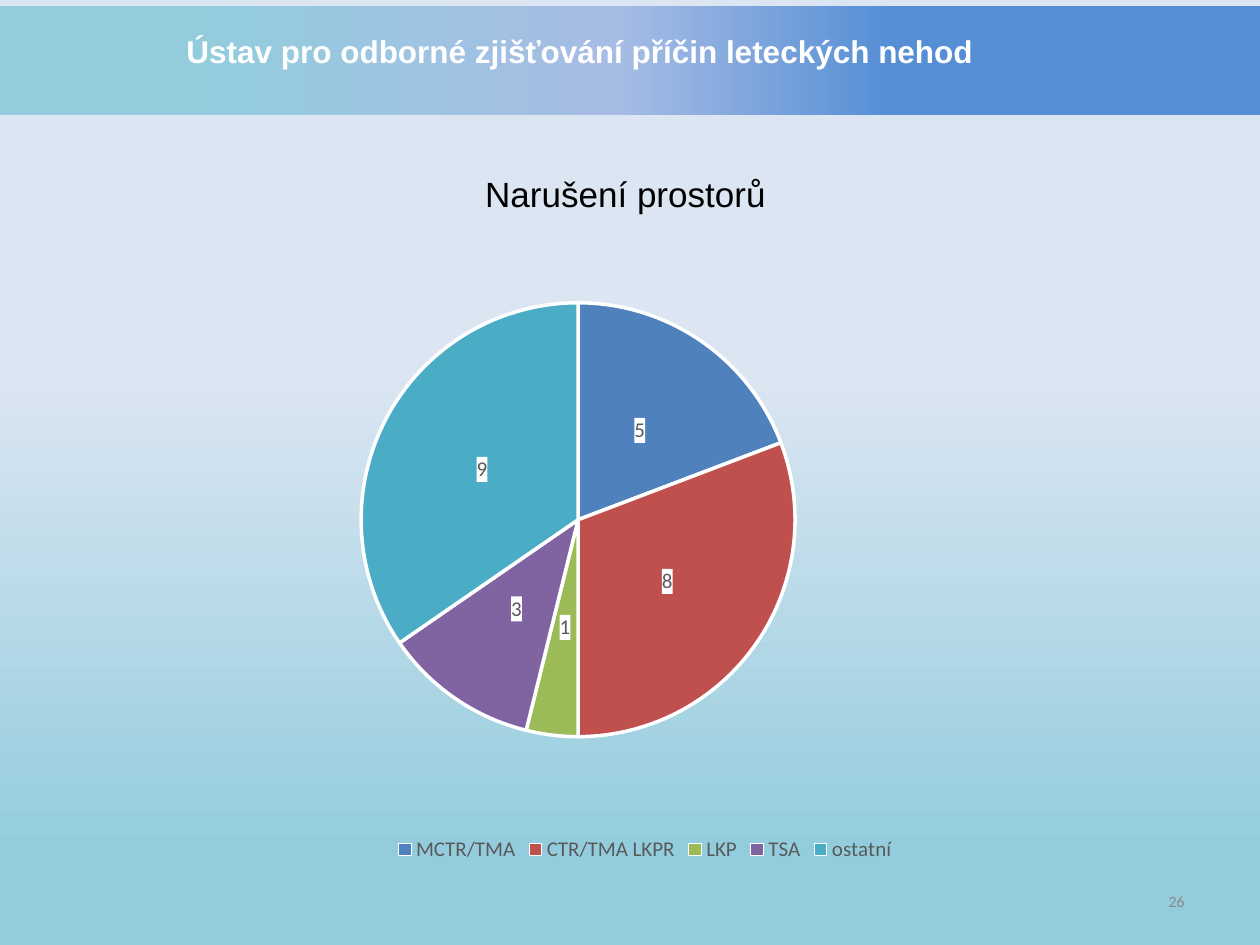
import pptx
import pptx.chart.data
import pptx.dml.color
import pptx.enum.chart
import pptx.enum.shapes
import pptx.enum.text
import pptx.oxml
import pptx.oxml.ns
import pptx.util

PX = 914400 / 126
COLORS = {
    "teal": "93CDDD", "pale": "DCE6F2", "lilac": "A6BCE4", "blue": "558ED5",
    "white": "FFFFFF", "black": "000000", "grey": "898989", "dark": "595959",
}
SLICES = [
    ("MCTR/TMA", 5, "4F81BD"),
    ("CTR/TMA LKPR", 8, "C0504D"),
    ("LKP", 1, "9BBB59"),
    ("TSA", 3, "8064A2"),
    ("ostatní", 9, "4BACC6"),
]
PLOT = {"x": 0.06, "y": 0.09, "w": 0.76, "h": 0.7}
ALIGN = pptx.enum.text.PP_ALIGN
ANCHOR = pptx.enum.text.MSO_ANCHOR
NS = pptx.oxml.ns.nsdecls


def px(*lengths):
    return [pptx.util.Emu(round(length * PX)) for length in lengths]


def rgb(value):
    return pptx.dml.color.RGBColor.from_string(COLORS.get(value, value))


def style_font(font, color, **values):
    for name, value in values.items():
        setattr(font, name, pptx.util.Pt(value) if name == "size" else value)
    font.color.rgb = rgb(color)


def set_gradient(fill, owner, angle, stops):
    fill.gradient()
    fill.gradient_angle = angle
    stop_list = owner.xpath(".//a:gsLst")[0]
    for stop in list(stop_list):
        stop_list.remove(stop)
    for position, color in stops:
        stop_list.append(pptx.oxml.parse_xml(
            f'<a:gs {NS("a")} pos="{position * 1000}">'
            f'<a:srgbClr val="{COLORS[color]}"/></a:gs>'))


def add_band(page, place, stops):
    band = page.shapes.add_shape(pptx.enum.shapes.MSO_SHAPE.RECTANGLE, *px(*place))
    band.shadow.inherit = False
    band.line.fill.background()
    set_gradient(band.fill, band.element, 180, stops)


def add_text(page, place, text, color, align=ALIGN.LEFT, anchor=ANCHOR.TOP, **font):
    box = page.shapes.add_textbox(*px(*place))
    box.text_frame.word_wrap = True
    box.text_frame.vertical_anchor = anchor
    para = box.text_frame.paragraphs[0]
    para.alignment = align
    span = para.add_run()
    span.text = text
    style_font(span.font, color, **font)
    return box


def add_text_shadow(box):
    fill = box.element.xpath(".//a:rPr/a:solidFill")[0]
    fill.addnext(pptx.oxml.parse_xml(
        f'<a:effectLst {NS("a")}><a:outerShdw blurRad="38100" dist="38100" dir="2700000">'
        '<a:srgbClr val="000000"><a:alpha val="43000"/></a:srgbClr>'
        '</a:outerShdw></a:effectLst>'))


def set_plot_layout(chart):
    area = chart.element.xpath(".//c:plotArea")[0]
    for layout in area.xpath("./c:layout"):
        area.remove(layout)
    sizes = "".join(f'<c:{key} val="{value}"/>' for key, value in PLOT.items())
    area.insert(0, pptx.oxml.parse_xml(
        f'<c:layout {NS("c")}><c:manualLayout><c:layoutTarget val="inner"/>'
        f'<c:xMode val="edge"/><c:yMode val="edge"/>{sizes}'
        '</c:manualLayout></c:layout>'))


def add_pie(page, place):
    data = pptx.chart.data.CategoryChartData()
    data.categories = [name for name, _, _ in SLICES]
    data.add_series("Series 1", [value for _, value, _ in SLICES])
    chart = page.shapes.add_chart(
        pptx.enum.chart.XL_CHART_TYPE.PIE, *px(*place), data).chart
    chart.has_title = False
    style_font(chart.font, "black", name="Calibri", size=10)
    set_plot_layout(chart)

    # Slices with white edges
    plot = chart.plots[0]
    plot.vary_by_categories = True
    for index, (_, _, color) in enumerate(SLICES):
        look = plot.series[0].points[index].format
        look.fill.solid()
        look.fill.fore_color.rgb = rgb(color)
        look.line.color.rgb = rgb("white")
        look.line.width = pptx.util.Pt(2)

    # Values on white
    labels = plot.series[0].data_labels
    labels.show_value = True
    labels.position = pptx.enum.chart.XL_LABEL_POSITION.CENTER
    style_font(labels.font, "dark", name="Calibri", size=12)
    chart.element.xpath(".//c:dLbls/c:txPr")[0].addprevious(pptx.oxml.parse_xml(
        f'<c:spPr {NS("c", "a")}><a:solidFill><a:srgbClr val="{COLORS["white"]}"/>'
        '</a:solidFill></c:spPr>'))

    # Legend
    chart.has_legend = True
    chart.legend.position = pptx.enum.chart.XL_LEGEND_POSITION.BOTTOM
    chart.legend.include_in_layout = False
    style_font(chart.legend.font, "dark", name="Calibri", size=12)


def main():
    deck = pptx.Presentation()
    deck.slide_width, deck.slide_height = px(1260, 945)
    page = deck.slides.add_slide(deck.slide_layouts[6])

    # Background and header
    set_gradient(page.background.fill, page.element, 90, [(10, "teal"), (61, "pale")])
    add_band(page, (0, 6, 1260, 109), [(29, "blue"), (51, "lilac"), (86, "teal")])
    header = add_text(page, (174, 26, 1091, 51),
                      "Ústav pro odborné zjišťování příčin leteckých nehod",
                      "white", name="Arial", size=18, bold=True)
    add_text_shadow(header)

    # Heading, page number and chart
    add_text(page, (43, 166, 1165, 701), "Narušení prostorů", "black",
             ALIGN.CENTER, name="Arial", size=20)
    add_text(page, (903, 876, 294, 50), "26", "grey",
             ALIGN.RIGHT, ANCHOR.MIDDLE, name="Calibri", size=9)
    add_pie(page, (88, 247, 1114, 620))
    deck.save("out.pptx")


if __name__ == "__main__":
    main()
